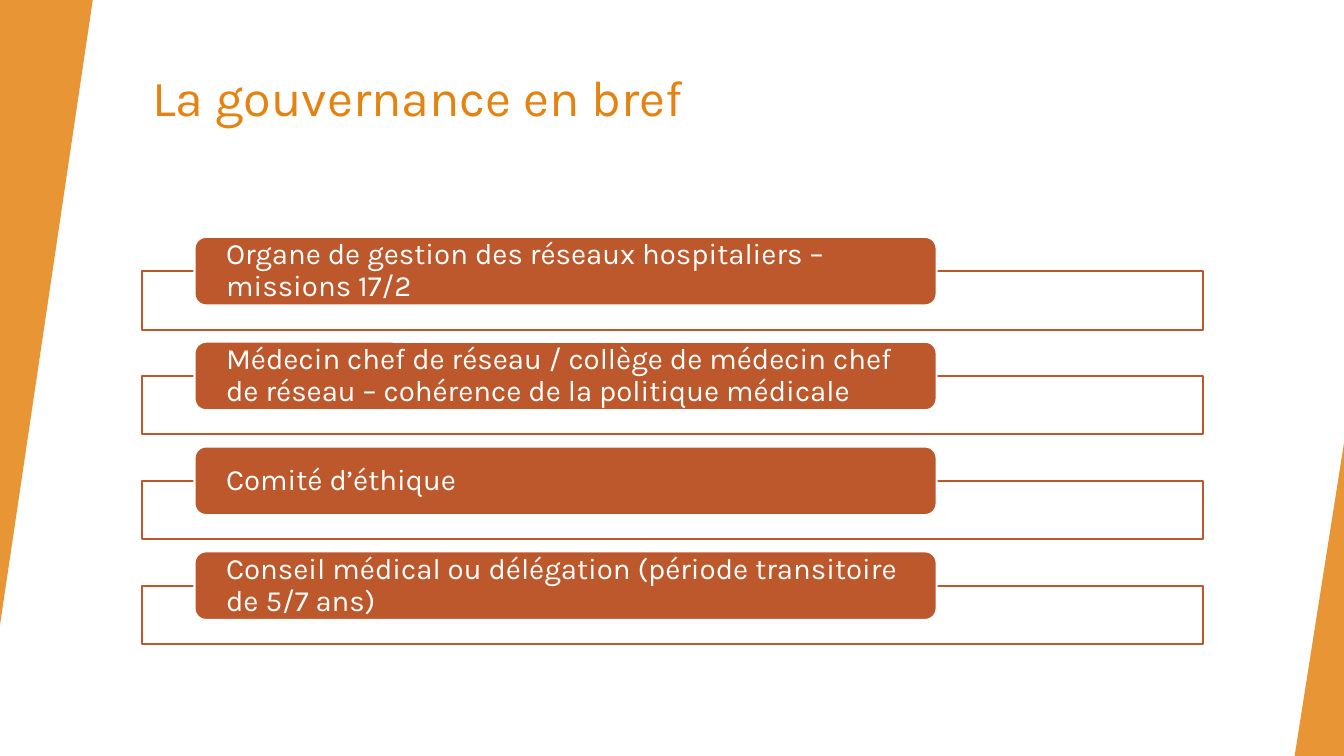
from dataclasses import dataclass

from lxml.etree import SubElement
from pptx import Presentation
from pptx.dml.color import RGBColor
from pptx.enum.shapes import MSO_SHAPE
from pptx.enum.text import MSO_ANCHOR, MSO_AUTO_SIZE, PP_ALIGN
from pptx.oxml.ns import qn
from pptx.util import Inches, Pt


@dataclass(frozen=True)
class Theme:
    """Colours, font and type sizes of the slide."""
    orange: RGBColor = RGBColor.from_string("E48312")
    rust: RGBColor = RGBColor.from_string("BD582C")
    white: RGBColor = RGBColor.from_string("FFFFFF")
    font: str = "Karla"
    title_size: Pt = Pt(36)
    label_size: Pt = Pt(21)
    line_width: Pt = Pt(1.5)


THEME = Theme()
TITLE = "La gouvernance en bref"
BODIES = [
    "Organe de gestion des réseaux hospitaliers –missions 17/2",
    "Médecin chef de réseau / collège de médecin chef de réseau – cohérence de la politique médicale",
    "Comité d’éthique",
    "Conseil médical ou délégation (période transitoire de 5/7 ans)",
]
FIRST_TOP = 2.35
ROW_PITCH = 1.04


def apply_format(target, values):
    """Set each attribute named in a dict of format values."""
    for name, value in values.items():
        setattr(target, name, value)


def add_box(slide, preset, bounds, fill, line=None, opacity=100):
    """Add a filled preset shape, outlined when a line colour is given."""
    box = slide.shapes.add_shape(preset, *map(Inches, bounds))
    box.shadow.inherit = False
    box.fill.solid()
    box.fill.fore_color.rgb = fill
    if opacity < 100:
        colour = box.fill._xPr.find(qn("a:solidFill"))[0]
        SubElement(colour, qn("a:alpha"), val=str(opacity * 1000))
    if line is None:
        box.line.fill.background()
    else:
        box.line.color.rgb = line
        box.line.width = THEME.line_width
    return box


def write_text(box, text, size, colour, frame_format):
    """Write one left-aligned paragraph into a shape or placeholder."""
    frame = box.text_frame
    apply_format(frame, {"word_wrap": True, "auto_size": MSO_AUTO_SIZE.NONE, **frame_format})
    para = frame.paragraphs[0]
    apply_format(para, {"alignment": PP_ALIGN.LEFT, "line_spacing": 0.9, "space_before": Pt(0)})
    span = para.add_run()
    span.text = text
    apply_format(span.font, {"name": THEME.font, "size": size})
    span.font.color.rgb = colour


def add_title(slide):
    """Place and fill the title placeholder."""
    title = slide.shapes.title
    apply_format(title, {"left": Inches(1.41), "top": Inches(0.67),
                         "width": Inches(11.15), "height": Inches(1.2)})
    write_text(title, TITLE, THEME.title_size, THEME.orange, {"vertical_anchor": MSO_ANCHOR.TOP})


def add_wedge(slide, bounds, rotation=0):
    """Add a translucent right-angled triangle at a slide edge."""
    wedge = add_box(slide, MSO_SHAPE.ISOSCELES_TRIANGLE, bounds, THEME.orange, opacity=85)
    wedge.adjustments[0] = 1
    wedge.rotation = rotation


def add_body_row(slide, top, text):
    """Add an outlined frame with a rounded label over its upper edge."""
    add_box(slide, MSO_SHAPE.RECTANGLE, (1.41, top + 0.34, 10.52, 0.58),
            THEME.white, THEME.rust, opacity=90)
    label = add_box(slide, MSO_SHAPE.ROUNDED_RECTANGLE, (1.93, top, 7.36, 0.68),
                    THEME.rust, THEME.white)
    write_text(label, text, THEME.label_size, THEME.white, {
        "vertical_anchor": MSO_ANCHOR.MIDDLE,
        "margin_left": Inches(0.28), "margin_right": Inches(0.28),
        "margin_top": 0, "margin_bottom": 0,
    })


def main():
    """Build the governance slide and save it."""
    deck = Presentation()
    apply_format(deck, {"slide_width": Inches(13.33), "slide_height": Inches(7.5)})
    page = deck.slides.add_slide(deck.slide_layouts[5])
    add_title(page)
    add_wedge(page, (0, 0, 0.92, 6.2), rotation=180)
    add_wedge(page, (12.84, 4.39, 0.49, 3.11))
    for index, body in enumerate(BODIES):
        add_body_row(page, FIRST_TOP + index * ROW_PITCH, body)
    deck.save("out.pptx")


if __name__ == "__main__":
    main()
